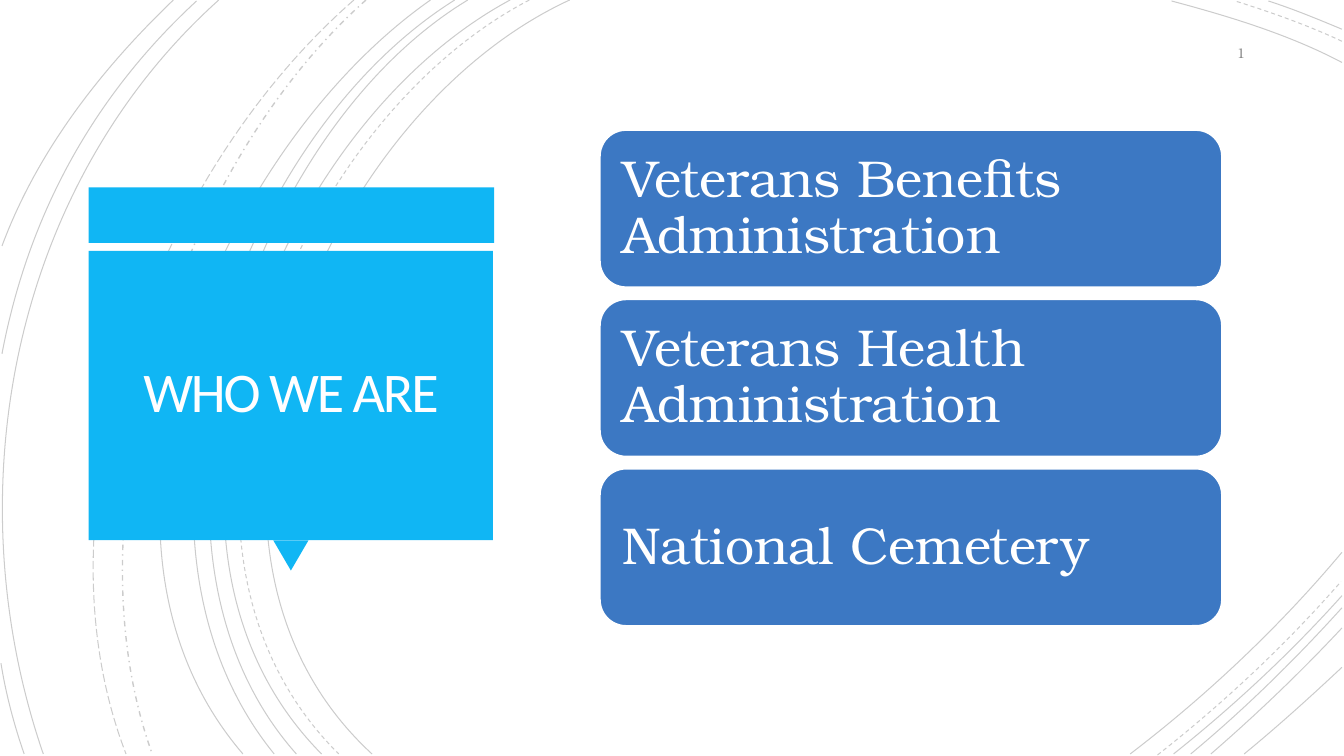
from dataclasses import dataclass

from lxml.etree import SubElement
from pptx import Presentation
from pptx.dml.color import RGBColor
from pptx.enum.dml import MSO_LINE
from pptx.enum.shapes import MSO_SHAPE
from pptx.enum.text import MSO_ANCHOR, PP_ALIGN
from pptx.oxml.ns import qn
from pptx.shapes.autoshape import Shape
from pptx.slide import Slide
from pptx.util import Inches, Pt


@dataclass(frozen=True)
class Theme:
    accent: RGBColor = RGBColor(0x10, 0xB6, 0xF4)
    card: RGBColor = RGBColor(0x3C, 0x78, 0xC3)
    white: RGBColor = RGBColor(0xFF, 0xFF, 0xFF)
    title: RGBColor = RGBColor(0xFF, 0xFE, 0xFF)
    number: RGBColor = RGBColor(0x8C, 0x8C, 0x8C)
    arc: RGBColor = RGBColor(0, 0, 0)
    arc_opacity: int = 20
    title_font: str = "Calibri"
    body_font: str = "TeX Gyre Bonum"
    title_size: float = 40
    card_size: float = 37
    number_size: float = 10


@dataclass(frozen=True)
class Box:
    left: float
    top: float
    width: float
    height: float


@dataclass(frozen=True)
class TextStyle:
    font: str
    size: float
    color: RGBColor
    alignment: PP_ALIGN
    inset: float
    line_spacing: float = 1.0
    tracking: float = 0


@dataclass(frozen=True)
class Arc:
    points: tuple[float, ...]
    dash: MSO_LINE = MSO_LINE.SOLID
    width: float = 0.75


THEME = Theme()

ARCS = (
    Arc((5.65, 0, 3.15, 1.15, 1.43, 5.4, 3.69, 7.48)),
    Arc((13.31, 0.62, 12.78, 0.34, 12.18, 0.16, 11.62, 0.01)),
    Arc((11.21, 7.48, 11.97, 6.9, 12.69, 6.22, 13.31, 5.48)),
    Arc((5.25, 0, 2.85, 1.25, 1.23, 5.37, 3.36, 7.48), MSO_LINE.DASH),
    Arc((13.31, 0.41, 12.97, 0.25, 12.6, 0.12, 12.25, 0.01), MSO_LINE.DASH),
    Arc((11.48, 7.49, 12.13, 6.98, 12.75, 6.4, 13.3, 5.77), MSO_LINE.DASH),
    Arc((5.06, 0, 2.7, 1.27, 1.1, 5.37, 3.19, 7.48)),
    Arc((13.31, 0.29, 13.07, 0.19, 12.83, 0.09, 12.58, 0.01)),
    Arc((11.64, 7.48, 12.23, 7.01, 12.8, 6.48, 13.31, 5.91)),
    Arc((4.64, 0, 2.44, 1.33, 1.1, 5.41, 2.94, 7.48)),
    Arc((11.81, 7.48, 12.34, 7.04, 12.84, 6.55, 13.31, 6.03)),
    Arc((4.51, 0, 2.31, 1.38, 0.97, 5.33, 2.72, 7.48)),
    Arc((12.01, 7.48, 12.46, 7.09, 12.9, 6.67, 13.31, 6.23)),
    Arc((4.27, 0, 2.17, 1.47, 0.53, 5.29, 2.41, 7.48)),
    Arc((12.34, 7.48, 12.67, 7.21, 12.99, 6.92, 13.31, 6.62)),
    Arc((3.63, 0, 1.76, 1.66, 0.65, 5.09, 1.51, 7.48), MSO_LINE.DASH_DOT, 1),
    Arc((3.51, 0, 1.57, 1.69, 0.29, 4.99, 1.25, 7.48), MSO_LINE.LONG_DASH),
    Arc((2.17, 0, 0.11, 1.85, -0.46, 4.9, 0.43, 7.48)),
    Arc((1.95, 0.01, 0.92, 0.96, 0.28, 2.14, 0.02, 3.51)),
    Arc((0.01, 6.58, 0.06, 6.89, 0.14, 7.19, 0.24, 7.48)),
    Arc((1.72, 0, 1, 0.69, 0.37, 1.5, 0.02, 2.44)),
)

TITLE_BAND = Box(0.88, 1.86, 4.02, 0.55)
TITLE_POINTER = Box(2.71, 5.36, 0.35, 0.3)
TITLE_PANEL = Box(0.88, 2.49, 4.01, 2.87)
NUMBER_BOX = Box(11.45, 0.35, 1, 0.35)
FIRST_CARD = Box(5.95, 1.29, 6.17, 1.56)
CARD_PITCH = 1.68
CARDS = (
    "Veterans Benefits Administration",
    "Veterans Health Administration",
    "National Cemetery",
)

TITLE_STYLE = TextStyle(
    THEME.title_font, THEME.title_size, THEME.title, PP_ALIGN.CENTER, 0.25, 0.85, -1.5
)
NUMBER_STYLE = TextStyle(
    THEME.body_font, THEME.number_size, THEME.number, PP_ALIGN.RIGHT, 0.1
)
CARD_STYLE = TextStyle(
    THEME.body_font, THEME.card_size, THEME.white, PP_ALIGN.LEFT, 0.15, 0.9
)


def place(box: Box) -> tuple[Inches, Inches, Inches, Inches]:
    return Inches(box.left), Inches(box.top), Inches(box.width), Inches(box.height)


def draw_arc(slide: Slide, arc: Arc) -> None:
    lengths = [Inches(value) for value in arc.points]
    start, *controls = zip(lengths[::2], lengths[1::2])
    builder = slide.shapes.build_freeform(*start)
    builder.add_line_segments(controls, close=False)
    shape = builder.convert_to_shape()
    outline = shape.element.xpath(".//a:path")[0]
    curve = SubElement(outline, qn("a:cubicBezTo"))
    for segment in outline.findall(qn("a:lnTo")):
        curve.append(segment[0])
        outline.remove(segment)
    shape.shadow.inherit = False
    shape.fill.background()
    shape.line.color.rgb = THEME.arc
    shape.line.width = Pt(arc.width)
    shape.line.dash_style = arc.dash
    color = shape.element.xpath("./p:spPr/a:ln//a:srgbClr")[0]
    SubElement(color, qn("a:alpha")).set("val", str(THEME.arc_opacity * 1000))


def draw_shape(slide: Slide, kind: MSO_SHAPE, box: Box, color: RGBColor) -> Shape:
    shape = slide.shapes.add_shape(kind, *place(box))
    shape.shadow.inherit = False
    shape.fill.solid()
    shape.fill.fore_color.rgb = color
    shape.line.fill.background()
    return shape


def write(shape: Shape, text: str, style: TextStyle) -> None:
    frame = shape.text_frame
    frame.text = text
    frame.word_wrap = True
    frame.vertical_anchor = MSO_ANCHOR.MIDDLE
    frame.margin_left = frame.margin_right = Inches(style.inset)
    frame.margin_top = frame.margin_bottom = Inches(min(style.inset, 0.25))
    paragraph = frame.paragraphs[0]
    paragraph.alignment = style.alignment
    paragraph.line_spacing = style.line_spacing
    run = paragraph.runs[0]
    run.font.name = style.font
    run.font.size = Pt(style.size)
    run.font.color.rgb = style.color
    if style.tracking:
        run.font._element.set("spc", str(round(style.tracking * 100)))


def draw_title(slide: Slide) -> None:
    draw_shape(slide, MSO_SHAPE.RECTANGLE, TITLE_BAND, THEME.accent)
    pointer = draw_shape(
        slide, MSO_SHAPE.ISOSCELES_TRIANGLE, TITLE_POINTER, THEME.accent
    )
    pointer.rotation = 180
    panel = draw_shape(slide, MSO_SHAPE.RECTANGLE, TITLE_PANEL, THEME.accent)
    write(panel, "WHO WE ARE", TITLE_STYLE)


def draw_card(slide: Slide, index: int, text: str) -> None:
    top = FIRST_CARD.top + index * CARD_PITCH
    box = Box(FIRST_CARD.left, top, FIRST_CARD.width, FIRST_CARD.height)
    card = draw_shape(slide, MSO_SHAPE.ROUNDED_RECTANGLE, box, THEME.card)
    card.line.color.rgb = THEME.white
    card.line.width = Pt(1.25)
    write(card, text, CARD_STYLE)


def main() -> None:
    presentation = Presentation()
    presentation.slide_width = Inches(13.33)
    presentation.slide_height = Inches(7.5)
    slide = presentation.slides.add_slide(presentation.slide_layouts[6])
    for arc in ARCS:
        draw_arc(slide, arc)
    draw_title(slide)
    write(slide.shapes.add_textbox(*place(NUMBER_BOX)), "1", NUMBER_STYLE)
    for index, text in enumerate(CARDS):
        draw_card(slide, index, text)
    presentation.save("out.pptx")


if __name__ == "__main__":
    main()
